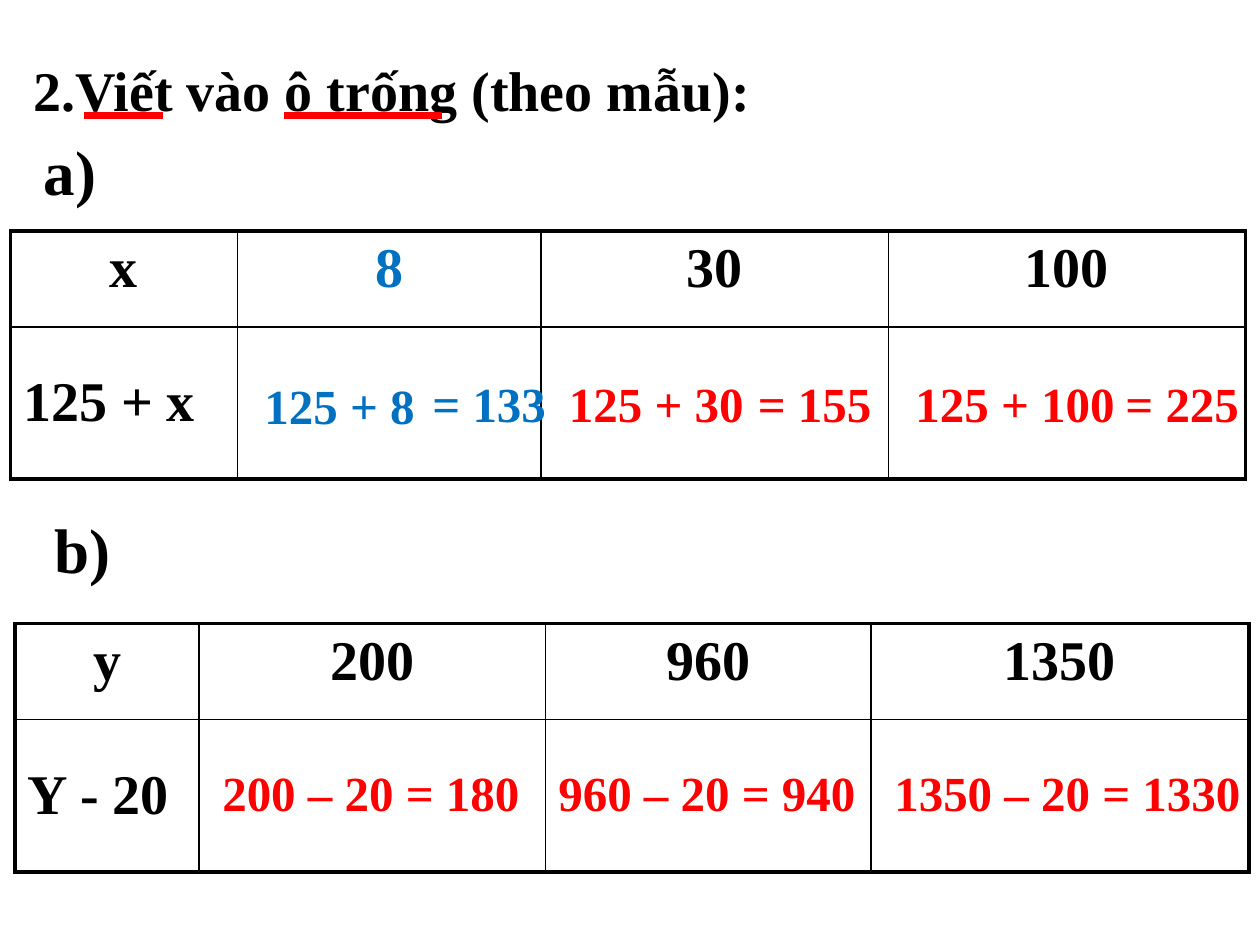
"""Build a maths exercise slide with two fill-in tables."""
from dataclasses import dataclass

from lxml import etree
from pptx import Presentation
from pptx import util as u
from pptx.dml.color import RGBColor
from pptx.enum import shapes, text
from pptx.oxml.ns import qn

BLACK = RGBColor(0, 0, 0)
RED = RGBColor(0xFF, 0, 0)
BLUE = RGBColor(0, 0x70, 0xC0)
NAVY = RGBColor(0, 0x20, 0x60)
FONT = "Times New Roman"
COLS, ROWS = 120, 90
WIDE, HIGH = u.Inches(10), u.Inches(7.5)
THICK, THIN = 2.25, 1
HEIGHTS = (9.12, 14.52)


@dataclass
class Label:
    """Text placed by grid column and row."""
    words: str
    col: float
    row: float
    wide: float
    high: float = 6.84
    size: float = 28
    hue: RGBColor = RED
    lead: int = 50


@dataclass
class Grid:
    """Table with a heading row and a rule to work out."""
    col: float
    row: float
    widths: tuple[float, ...]
    heads: tuple[str, ...]
    rule: str
    hues: tuple[RGBColor, ...] = (BLACK,) * 4


LABELS = (
    Label("125 + 8", 24, 35.16, 28, hue=BLUE),
    Label("= 133", 40, 35, 14, hue=BLUE),
    Label("125 + 30", 53, 35, 26),
    Label("= 155", 71, 35, 16.5),
    Label("125 + 100", 86, 35, 28),
    Label("= 225", 106, 35, 14),
    Label("a)", 3, 12, 8, 8.5, 36, BLACK, 0),
    Label("b)", 4, 48, 8, 8.5, 36, BLACK, 0),
    Label("200 – 20 = 180", 20, 72, 31),
    Label("960 – 20 = 940", 52, 72, 31),
    Label("1350 – 20 = 1330", 84, 72, 36),
)
GRIDS = (
    Grid(1, 22, (21.6, 28.92, 33.12, 33.96), ("x", "8", "30", "100"),
         "125 + x", (BLACK, BLUE, BLACK, BLACK)),
    Grid(1.44, 59.4, (17.5, 33, 31, 36), ("y", "200", "960", "1350"), "Y - 20"),
)
MARKS = ((8, 15.5), (27, 42.1))


def across(col: float) -> int:
    """Turn grid columns into a length."""
    return int(WIDE * col / COLS)


def down(row: float) -> int:
    """Turn grid rows into a length."""
    return int(HIGH * row / ROWS)


def style(run, size: float, hue: RGBColor) -> None:
    """Format one run."""
    font = run.font
    font.name, font.size, font.bold = FONT, u.Pt(size), True
    font.color.rgb = hue


def space(para, share: int) -> None:
    """Set the space before a paragraph as a percentage."""
    gap = etree.SubElement(para._p.get_or_add_pPr(), qn("a:spcBef"))
    etree.SubElement(gap, qn("a:spcPct"), val=str(share * 1000))


def write(slide, label: Label):
    """Draw a label and return its paragraph."""
    box = slide.shapes.add_textbox(across(label.col), down(label.row),
                                   across(label.wide), down(label.high))
    frame = box.text_frame
    frame.text = label.words
    frame.word_wrap = True
    frame.auto_size = text.MSO_AUTO_SIZE.SHAPE_TO_FIT_TEXT
    para = frame.paragraphs[0]
    style(para.runs[0], label.size, label.hue)
    if label.lead:
        space(para, label.lead)
    return para


def edge(cell, side: str, width: float) -> None:
    """Give one side of a cell a black border."""
    line = etree.SubElement(cell._tc.get_or_add_tcPr(), qn(f"a:ln{side}"),
                            w=str(u.Pt(width)))
    fill = etree.SubElement(line, qn("a:solidFill"))
    etree.SubElement(fill, qn("a:srgbClr"), val=str(BLACK))


def fill(cell, words: str, hue: RGBColor, head: bool) -> None:
    """Write and align the words of a cell."""
    cell.text_frame.text = words
    para = cell.text_frame.paragraphs[0]
    if head:
        para.alignment = text.PP_ALIGN.CENTER
        space(para, 20)
    else:
        cell.vertical_anchor = text.MSO_ANCHOR.MIDDLE
    style(para.runs[0], 32, hue)


def table(slide, grid: Grid) -> None:
    """Draw a table with a thick frame and thin inner lines."""
    last = len(grid.widths) - 1
    tab = slide.shapes.add_table(
        2, last + 1, across(grid.col), down(grid.row),
        across(sum(grid.widths)), down(sum(HEIGHTS))).table
    tab.first_row = tab.horz_banding = False
    for col, wide in zip(tab.columns, grid.widths):
        col.width = across(wide)
    for row, high in zip(tab.rows, HEIGHTS):
        row.height = down(high)
    for r in range(2):
        for c in range(last + 1):
            cell = tab.cell(r, c)
            outer = {"L": c == 0, "R": c == last, "T": r == 0, "B": r == 1}
            for side, thick in outer.items():
                edge(cell, side, THICK if thick else THIN)
            cell.fill.background()
    for c, (head, hue) in enumerate(zip(grid.heads, grid.hues)):
        fill(tab.cell(0, c), head, hue, True)
    fill(tab.cell(1, 0), grid.rule, BLACK, False)


def mark(slide, start: float, end: float) -> None:
    """Underline words of the title in red."""
    line = slide.shapes.add_connector(
        shapes.MSO_CONNECTOR.STRAIGHT, across(start), down(11),
        across(end), down(11))
    line.line.color.rgb = RED
    line.line.width = u.Pt(4)
    etree.SubElement(line._element.spPr, qn("a:effectLst"))


def main() -> None:
    """Build and save the slide."""
    deck = Presentation()
    deck.slide_width, deck.slide_height = WIDE, HIGH
    slide = deck.slides.add_slide(deck.slide_layouts[6])
    title = write(slide, Label(" ", 0, 2, COLS, 10.8, 48, NAVY))
    run = title.add_run()
    run.text = "2.Viết vào ô trống (theo mẫu):"
    style(run, 32, BLACK)
    for grid in GRIDS:
        table(slide, grid)
    for label in LABELS:
        write(slide, label)
    for start, end in MARKS:
        mark(slide, start, end)
    deck.save("out.pptx")


if __name__ == "__main__":
    main()
